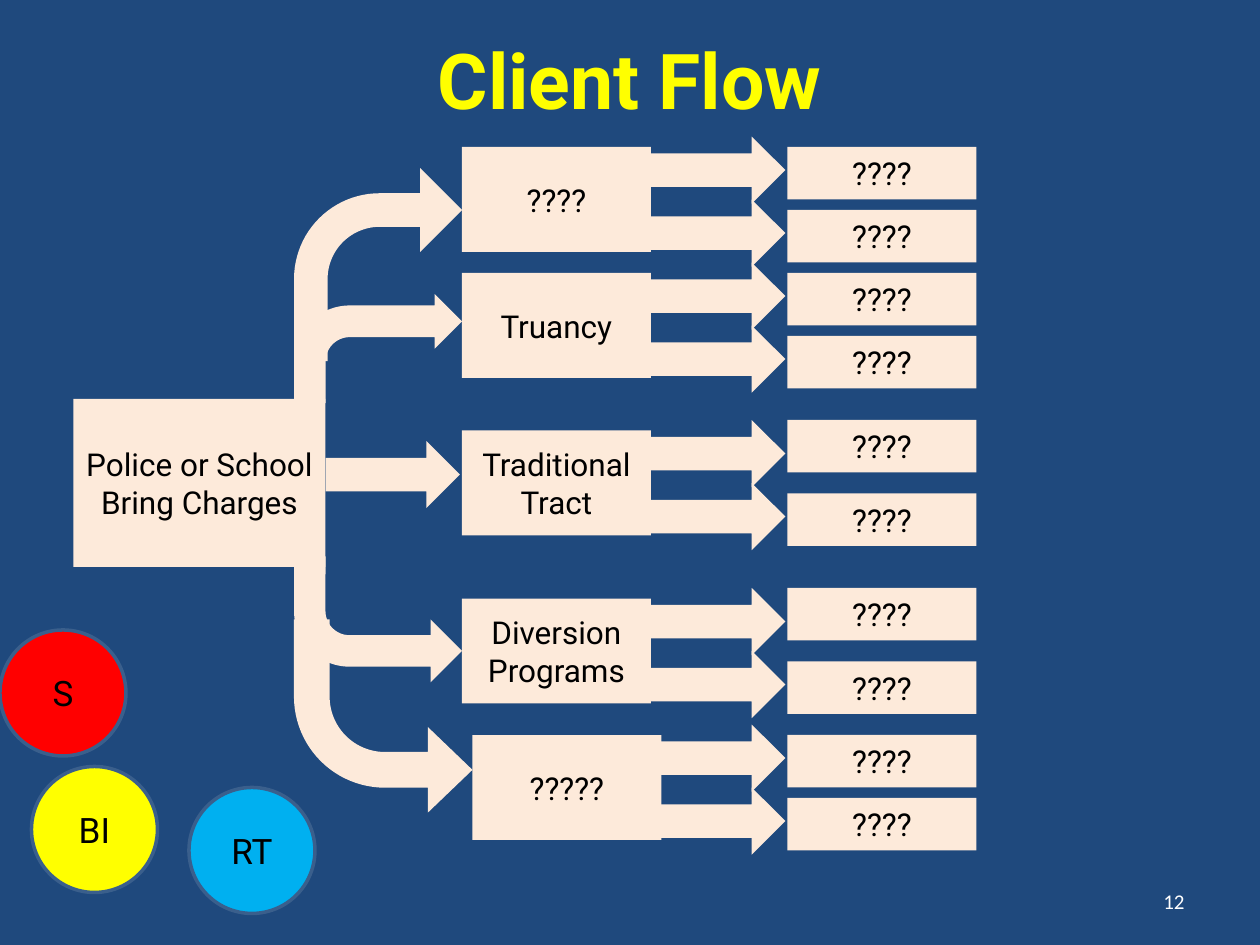
from pptx import Presentation
from pptx.dml.color import RGBColor
from pptx.enum.shapes import MSO_SHAPE
from pptx.enum.text import MSO_ANCHOR, PP_ALIGN
from pptx.oxml.ns import qn
from pptx.util import Inches, Pt

RECTANGLE = MSO_SHAPE.RECTANGLE
OVAL = MSO_SHAPE.OVAL
RIGHT_ARROW = MSO_SHAPE.RIGHT_ARROW
BENT_ARROW = MSO_SHAPE.BENT_ARROW
CENTER, RIGHT = PP_ALIGN.CENTER, PP_ALIGN.RIGHT
MIDDLE = MSO_ANCHOR.MIDDLE

CREAM = "FDEADA"
COLUMNS, ROWS = 120, 90

presentation = Presentation()
presentation.slide_width = Inches(10)
presentation.slide_height = Inches(7.5)
cell = presentation.slide_width / COLUMNS  # square cells, 120 by 90
slide = presentation.slides.add_slide(presentation.slide_layouts[6])
slide.background.fill.solid()
slide.background.fill.fore_color.rgb = RGBColor.from_string("1F497D")


def add_item(kind, column, row, width, height, fill=CREAM, outline=None):
    """Place a shape on the grid; without a kind it is a text box."""
    box = [round(value * cell) for value in (column, row, width, height)]
    if kind is None:
        return slide.shapes.add_textbox(*box)
    shape = slide.shapes.add_shape(kind, *box)
    shape.shadow.inherit = False
    shape.fill.solid()
    shape.fill.fore_color.rgb = RGBColor.from_string(fill)
    if outline:
        shape.line.color.rgb = RGBColor.from_string(outline)
        shape.line.width = Pt(2)
    else:
        shape.line.fill.background()
    return shape


def write(shape, lines, size=18, color="000000", font="Roboto", bold=False, align=CENTER):
    """Write one paragraph for each line, centred vertically."""
    frame = shape.text_frame
    frame.word_wrap = True
    frame.vertical_anchor = MIDDLE
    for index, line in enumerate(lines):
        paragraph = frame.paragraphs[0] if index == 0 else frame.add_paragraph()
        paragraph.alignment = align
        run = paragraph.add_run()
        run.text = line
        run.font.size = Pt(size)
        run.font.name = font
        run.font.bold = bold
        run.font.color.rgb = RGBColor.from_string(color)


# Title
title = add_item(None, 6, 0, 108, 15)
write(title, ["Client Flow"], size=44, color="FFFF00", bold=True)

# Starting point and its straight arrow
start = add_item(RECTANGLE, 7, 38, 24, 16)
write(start, ["Police or School Bring Charges"])
add_item(RIGHT_ARROW, 31, 42, 12.8, 6.4)

# Bent arrows to the other stages: row, width, height, adjustments, pointing down
bent_arrows = [
    (28, 16, 10.4, (0.29, 0.25, 0.25, 0.51), False),
    (53, 16, 12, (0.25, 0.25, 0.25, 0.44), True),
    (16, 16, 18.4, (0.2, 0.25, 0.25, 0.51), False),
    (59, 17, 18.4, (0.2, 0.24, 0.25, 0.51), True),
]
for row, width, height, adjustments, downward in bent_arrows:
    arrow = add_item(BENT_ARROW, 28, row, width, height)
    for index, value in enumerate(adjustments):
        arrow.adjustments[index] = value
    if downward:
        arrow.element.spPr.find(qn("a:xfrm")).set("flipV", "1")

# Stages, each with two arrows to two outcomes: column, row, lines, outcome rows
stages = [
    (44, 14, ["????"], (14, 20)),
    (44, 26, ["Truancy"], (26, 32)),
    (44, 41, ["Traditional Tract"], (40, 47)),
    (44, 57, ["Diversion", "Programs"], (56, 63)),
    (45, 70, ["?????"], (70, 76)),
]
for column, row, lines, outcome_rows in stages:
    write(add_item(RECTANGLE, column, row, 18, 10), lines)
    for index, outcome_row in enumerate(outcome_rows):
        add_item(RIGHT_ARROW, 62, row - 1 + 6 * index, 12.8, 6.4)
        write(add_item(RECTANGLE, 75, outcome_row, 18, 5), ["????"])

# Circles
circles = [
    ("S", 0, 60, "FF0000"),
    ("BI", 3, 73, "FFFF00"),
    ("RT", 18, 75, "00B0F0"),
]
for label, column, row, fill in circles:
    circle = add_item(OVAL, column, row, 12, 12, fill, outline="3A5F8C")
    write(circle, [label], size=20)

# Slide number
number = add_item(None, 86, 83.4, 28, 4.8)
write(number, ["12"], size=12, color="FFFFFF", font="Calibri", align=RIGHT)

presentation.save("out.pptx")
